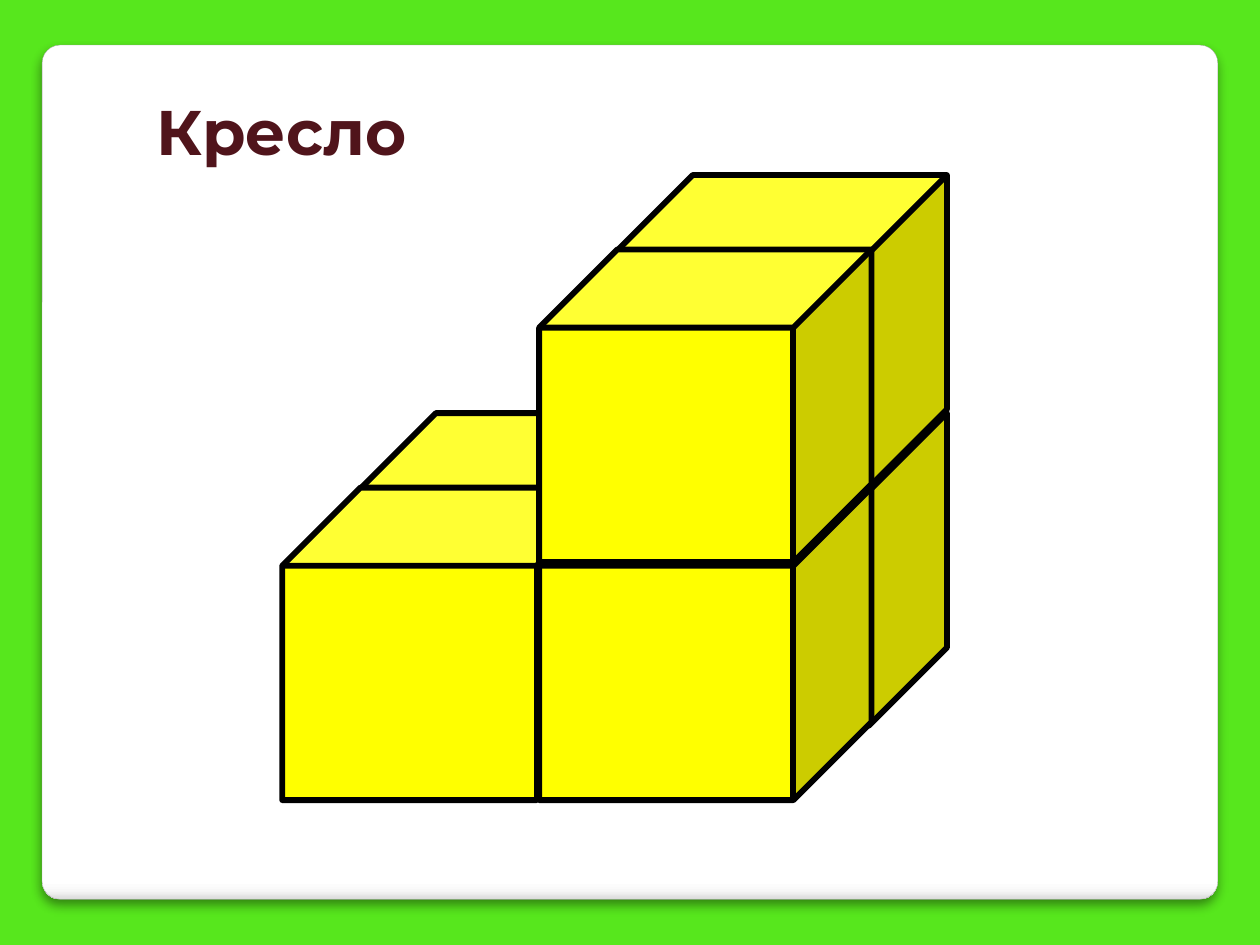
"""Build a slide with a stepped stack of yellow cubes on a white panel."""
from lxml.etree import SubElement as Sub
from pptx import Presentation
from pptx.dml.color import RGBColor
from pptx.enum.shapes import MSO_SHAPE as Kind
from pptx.enum.text import MSO_ANCHOR as Anchor, MSO_AUTO_SIZE as Fit, PP_ALIGN as Align
from pptx.oxml.ns import qn
from pptx.util import Cm, Pt

GREEN = RGBColor(0x57, 0xE7, 0x1D)
YELLOW = RGBColor(0xFF, 0xFF, 0x00)
BLACK = RGBColor(0x00, 0x00, 0x00)
WHITE = RGBColor(0xFF, 0xFF, 0xFF)
PALE = RGBColor(0xF7, 0xF7, 0xF7)
SILVER = RGBColor(0xDA, 0xDA, 0xDA)
GREY = RGBColor(0xA4, 0xA4, 0xA4)
WINE = RGBColor(0x50, 0x14, 0x1B)

CUBES = [(0, 1, 0), (1, 1, 0), (0, 0, 0), (1, 0, 0), (1, 1, 1), (1, 0, 1)]


def write(frame, text, font="Montserrat", size=36, color=BLACK, bold=False, align=Align.LEFT):
    par = frame.paragraphs[0]
    par.alignment = align
    run = par.add_run()
    run.text = text
    run.font.name = font
    run.font.size = Pt(size)
    run.font.bold = bold
    run.font.color.rgb = color


def tint(parent, color, alpha=None):
    node = Sub(parent, qn("a:srgbClr"), val=str(color))
    if alpha is not None:
        Sub(node, qn("a:alpha"), val=str(alpha * 1000))


class Board:
    def __init__(self, slide, edge=3.35):
        self.slide = slide
        self.edge = edge
        fill = slide.background.fill
        fill.solid()
        fill.fore_color.rgb = GREEN

    def panel(self, x, y, w, h):
        shape = self.slide.shapes.add_shape(Kind.ROUNDED_RECTANGLE, Cm(x), Cm(y), Cm(w), Cm(h))
        shape.adjustments[0] = 0.021
        shape.fill.gradient()
        shape.fill.gradient_angle = 270
        props = shape._element.spPr
        stops = props.find(".//" + qn("a:gsLst"))
        for stop in list(stops):
            stops.remove(stop)
        for pos, color in ((0, WHITE), (98, WHITE), (99, PALE), (100, SILVER)):
            tint(Sub(stops, qn("a:gs"), pos=str(pos * 1000)), color)
        shape.line.color.rgb = GREY
        shape.line.width = Pt(0.16)
        shape.shadow.inherit = False
        shade = Sub(props.find(qn("a:effectLst")), qn("a:outerShdw"), blurRad=str(Pt(6)),
                    dist=str(Pt(4)), dir="5400000", algn="ctr", rotWithShape="0")
        tint(shade, BLACK, 44)

    def cube(self, group, x, y, w, h):
        shape = group.shapes.add_shape(Kind.CUBE, Cm(x), Cm(y), Cm(w), Cm(h))
        shape.fill.solid()
        shape.fill.fore_color.rgb = YELLOW
        shape.line.color.rgb = BLACK
        shape.line.width = Pt(self.edge)
        shape.shadow.inherit = False

    def stack(self, x, y):
        group = self.slide.shapes.add_group_shape()
        for col, row, tier in CUBES:
            self.cube(group, x + 5.18 * col + 1.52 * row, y - 1.5 * row - 4.8 * tier, 6.7, 6.3)

    def title(self, text, x, y, w, h):
        shape = self.slide.shapes.title
        shape.left, shape.top, shape.width, shape.height = Cm(x), Cm(y), Cm(w), Cm(h)
        frame = shape.text_frame
        frame.word_wrap = True
        frame.auto_size = Fit.NONE
        frame.vertical_anchor = Anchor.TOP
        write(frame, text, color=WINE, bold=True)
        self.slide.shapes._spTree.append(shape._element)


def main():
    deck = Presentation()
    deck.slide_width, deck.slide_height = Cm(25.4), Cm(19.05)
    board = Board(deck.slides.add_slide(deck.slide_layouts[5]))
    board.panel(0.85, 0.91, 23.7, 17.22)
    board.stack(5.69, 9.83)
    board.title("Кресло", 2.9, 1.73, 7, 1.8)
    deck.save("out.pptx")


if __name__ == "__main__":
    main()
